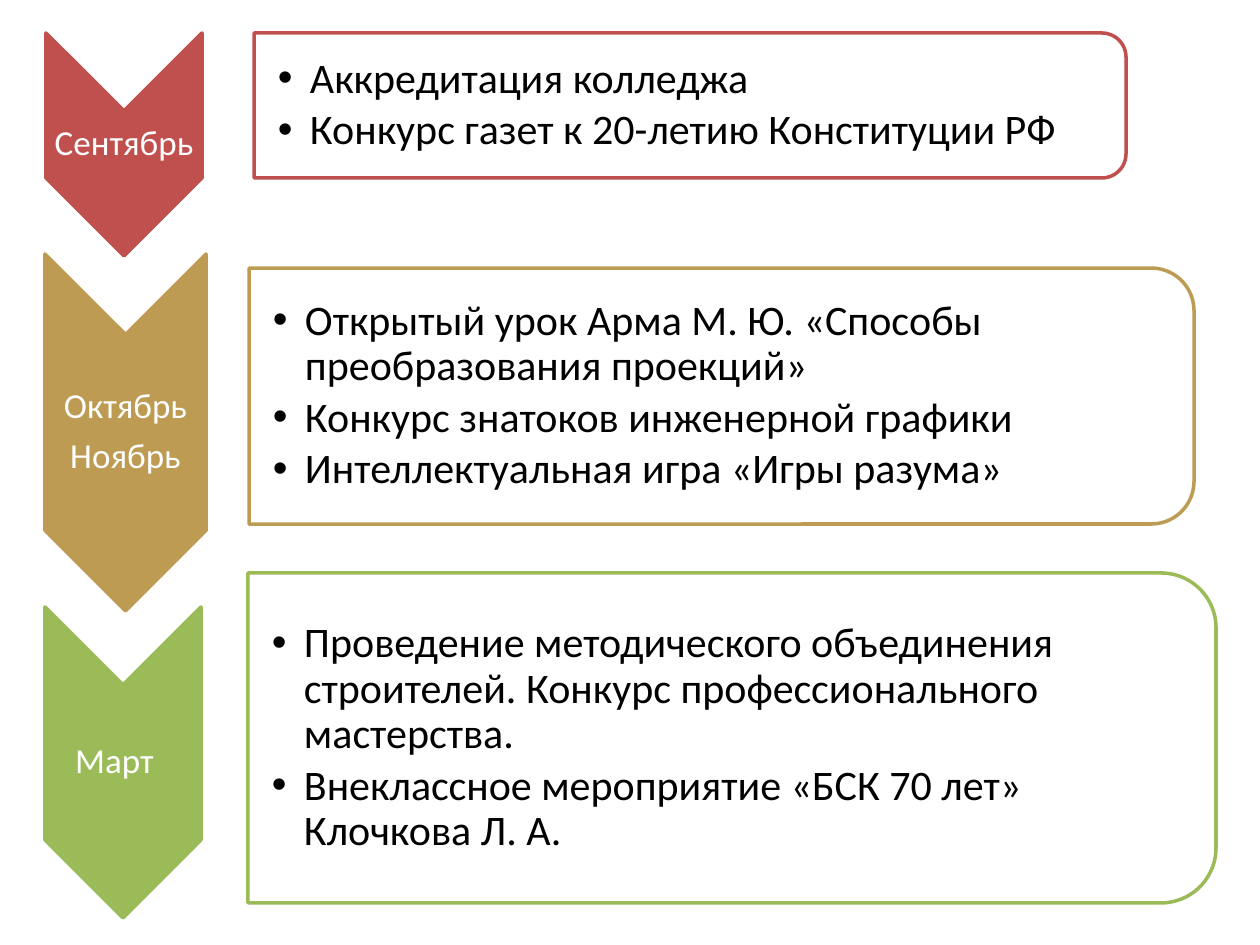
from lxml import etree
from pptx import Presentation
from pptx import util as u
from pptx.dml.color import RGBColor
from pptx.enum import shapes, text
from pptx.oxml.ns import qn

SCALE = 914400 / 126
HUES = {"red": "C0504D", "gold": "BD9B53", "green": "9BBB59",
        "white": "FFFFFF", "black": "000000"}
STEPS = [
    ("red", ["Сентябрь"], (46, 33, 156, 223), 1, (254, 33, 872, 145),
     ["Аккредитация колледжа",
      "Конкурс газет к 20-летию Конституции РФ"]),
    ("gold", ["Октябрь", "Ноябрь"], (45, 254, 161, 357), 1, (249, 268, 945, 256),
     ["Открытый урок Арма М. Ю. «Способы преобразования проекций»",
      "Конкурс знатоков инженерной графики",
      "Интеллектуальная игра «Игры разума»"]),
    ("green", ["Март"], (45, 607, 156, 311), 18, (248, 573, 968, 330),
     ["Проведение методического объединения строителей. "
      "Конкурс профессионального мастерства.",
      "Внеклассное мероприятие «БСК 70 лет» Клочкова Л. А."]),
]


def px(n):
    return u.Emu(round(n * SCALE))


def hue(name):
    return RGBColor.from_string(HUES[name])


def add_turned(slide, kind, area, fill, line):
    x, y, w, h = area
    left, top = x + (w - h) / 2, y + (h - w) / 2
    shape = slide.shapes.add_shape(kind, px(left), px(top), px(h), px(w))
    shape.rotation = 90
    shape.shadow.inherit = False
    shape.fill.solid()
    shape.fill.fore_color.rgb = hue(fill)
    shape.line.color.rgb = hue(line)
    shape.line.width = u.Pt(2)
    return shape


def fade(shape, share):
    tint = shape.fill._xPr.find(qn("a:solidFill"))[0]
    etree.SubElement(tint, qn("a:alpha")).set("val", str(share * 1000))


def add_dot(para):
    props = para._p.get_or_add_pPr()
    props.set("marL", str(px(32)))
    props.set("indent", str(-px(32)))
    etree.SubElement(props, qn("a:buFont")).set("typeface", "Arial")
    etree.SubElement(props, qn("a:buChar")).set("char", "•")


def add_text(slide, lines, area, size, color, gap, pads,
             align=text.PP_ALIGN.LEFT, dots=False):
    frame = slide.shapes.add_textbox(*map(px, area)).text_frame
    frame.word_wrap = True
    frame.vertical_anchor = text.MSO_ANCHOR.MIDDLE
    (frame.margin_left, frame.margin_top,
     frame.margin_right, frame.margin_bottom) = map(px, pads)
    for i, line in enumerate(lines):
        para = frame.paragraphs[0] if i == 0 else frame.add_paragraph()
        para.alignment = align
        para.line_spacing = 0.9
        para.space_after = u.Pt(gap)
        if dots:
            add_dot(para)
        run = para.add_run()
        run.text = line
        run.font.name = "Calibri"
        run.font.size = u.Pt(size)
        run.font.color.rgb = hue(color)


def add_month(slide, names, area, color, right):
    add_turned(slide, shapes.MSO_SHAPE.CHEVRON, area, color, color)
    x, y, w, h = area
    add_text(slide, names, (x, y + w / 2, w, h - w), size=20, color="white",
             gap=7, pads=(1, 1, right, 1), align=text.PP_ALIGN.CENTER)


def add_events(slide, items, area, color):
    card = add_turned(slide, shapes.MSO_SHAPE.ROUND_2_SAME_RECTANGLE,
                      area, "white", color)
    fade(card, 90)
    x, y, w, h = area
    pad = round(h / 6 * 0.29)
    add_text(slide, items, (x, y + pad, w - pad, h - 2 * pad), size=24,
             color="black", gap=3.6, pads=(24, 2, 2, 2), dots=True)


def main():
    deck = Presentation()
    deck.slide_width, deck.slide_height = px(1260), px(945)
    slide = deck.slides.add_slide(deck.slide_layouts[6])
    for color, names, arrow, right, card, items in STEPS:
        add_month(slide, names, arrow, color, right)
        add_events(slide, items, card, color)
    deck.save("out.pptx")


if __name__ == "__main__":
    main()
